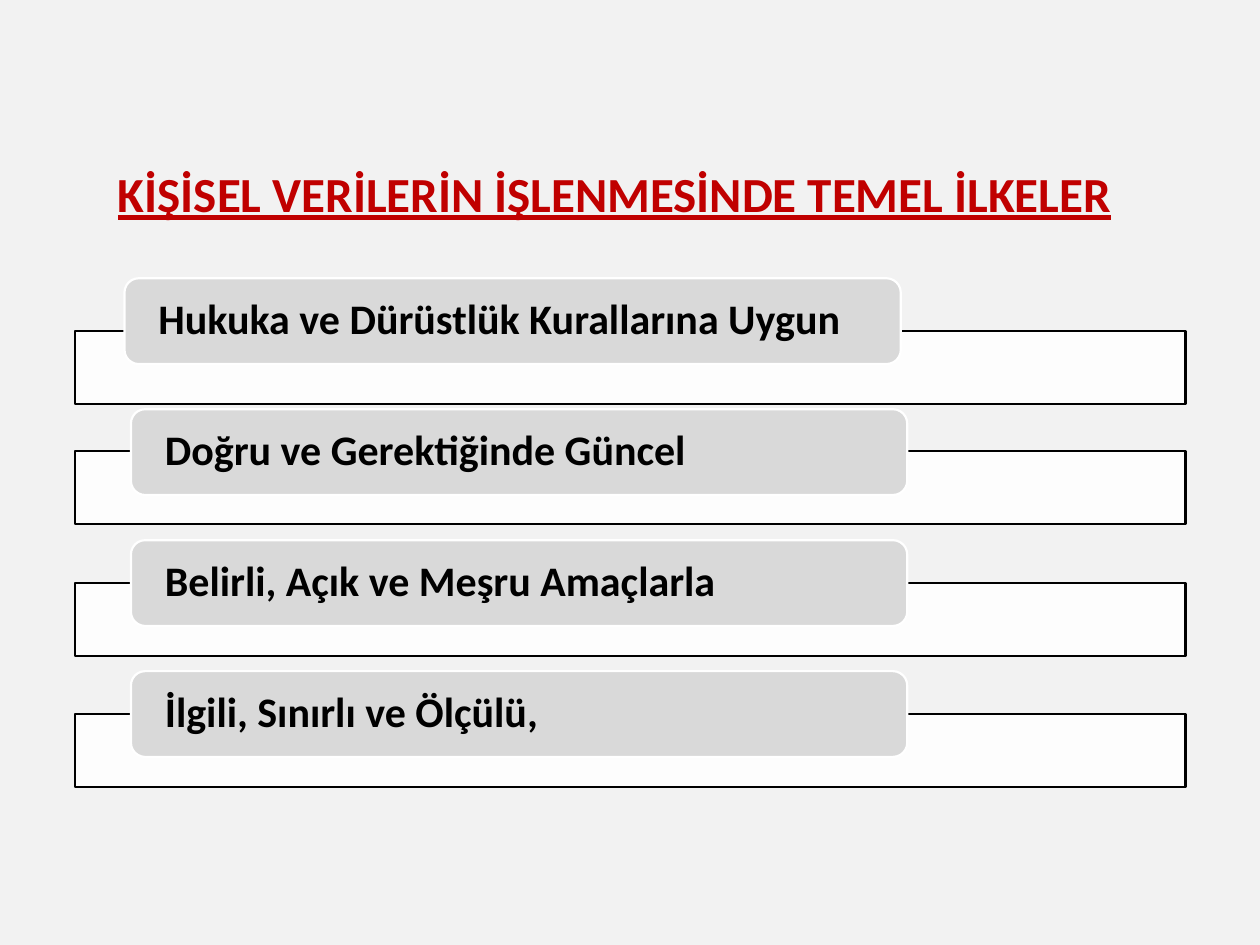
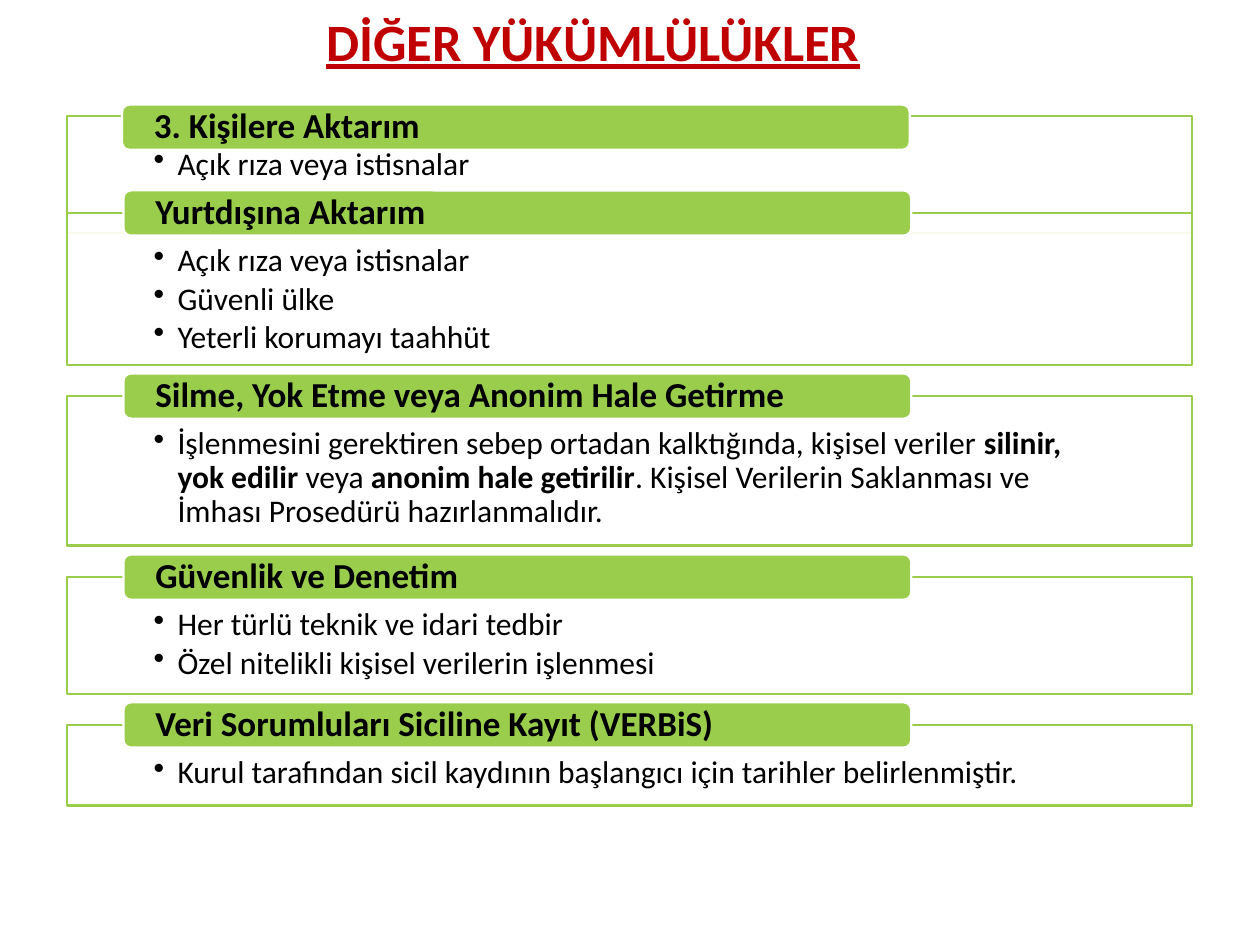
"""Build two slides on the principles and duties of personal data processing."""
from lxml.etree import SubElement
from pptx import Presentation
from pptx.dml.color import RGBColor
from pptx.enum.shapes import MSO_SHAPE
from pptx.enum.text import MSO_ANCHOR, PP_ALIGN
from pptx.oxml.ns import qn
from pptx.util import Cm, Pt

RED, BLACK, WHITE = "C00000", "000000", "FFFFFF"
LIGHT_GREY, GREY, GREEN = "F2F2F2", "D9D9D9", "9ACD4C"
FONT = "Calibri"


def color(hex_text):
    """Turn a hex string into a colour."""
    return RGBColor.from_string(hex_text)


def add_box(slide, preset, bounds, fill, line, margins):
    """Add a filled, outlined shape ready for left-aligned text."""
    shape = slide.shapes.add_shape(preset, *[Cm(length) for length in bounds])
    shape.shadow.inherit = False
    shape.fill.solid()
    shape.fill.fore_color.rgb = color(fill)
    shape.line.color.rgb = color(line)
    shape.line.width = Pt(1.25)
    frame = shape.text_frame
    frame.word_wrap = True
    frame.margin_left = frame.margin_right = Cm(margins[0])
    frame.margin_top, frame.margin_bottom = Cm(margins[1]), Cm(margins[2])
    return shape


presentation = Presentation()
presentation.slide_width, presentation.slide_height = Cm(25.4), Cm(19.05)

principles = [
    ("Hukuka ve Dürüstlük Kurallarına Uygun", 2.51, 6.68),
    ("Doğru ve Gerektiğinde Güncel", 2.64, 9.09),
    ("Belirli, Açık ve Meşru Amaçlarla", 2.64, 11.76),
    ("İlgili, Sınırlı ve Ölçülü,", 2.64, 14.4),
]
principle_blocks = [
    ((1.52, panel_top, 22.38, 1.47), (label_left, 5.61 + 2.64 * row, 15.65, 1.73), heading, [])
    for row, (heading, label_left, panel_top) in enumerate(principles)
]

duties = [
    ("3. Kişilere Aktarım", 2.46, 2.11, 2.34, 2.36, ["Açık rıza veya istisnalar"]),
    ("Yurtdışına Aktarım", 2.49, 3.84, 4.29, 3.07,
     ["Açık rıza veya istisnalar", "Güvenli ülke", "Yeterli korumayı taahhüt"]),
    ("Silme, Yok Etme veya Anonim Hale Getirme", 2.49, 7.53, 7.98, 3.02,
     ["İşlenmesini gerektiren sebep ortadan kalktığında, kişisel veriler "
      "*silinir, yok edilir *veya *anonim hale getirilir*. "
      "Kişisel Verilerin Saklanması ve İmhası Prosedürü hazırlanmalıdır."]),
    ("Güvenlik ve Denetim", 2.49, 11.18, 11.63, 2.36,
     ["Her türlü teknik ve idari tedbir", "Özel nitelikli kişisel verilerin işlenmesi"]),
    ("Veri Sorumluları Siciline Kayıt (VERBiS)", 2.49, 14.16, 14.61, 1.63,
     ["Kurul tarafından sicil kaydının başlangıcı için tarihler belirlenmiştir."]),
]
duty_blocks = [
    ((1.35, panel_top, 22.68, panel_height), (label_left, label_top, 15.88, 0.91), heading, bullets)
    for heading, label_left, label_top, panel_top, panel_height, bullets in duties
]

slides = [
    ("KİŞİSEL VERİLERİN İŞLENMESİNDE TEMEL İLKELER", 28, (0, 3.18, 24.77, 3.07),
     LIGHT_GREY, GREY, BLACK, 24, principle_blocks),
    ("DİĞER YÜKÜMLÜLÜKLER", 30, (-0.43, 0.05, 24.77, 1.55),
     WHITE, GREEN, GREEN, 20, duty_blocks),
]

for title, title_size, title_bounds, background, label_fill, panel_line, label_size, blocks in slides:
    slide = presentation.slides.add_slide(presentation.slide_layouts[6])
    slide.background.fill.solid()
    slide.background.fill.fore_color.rgb = color(background)

    title_box = slide.shapes.add_textbox(*[Cm(length) for length in title_bounds])
    title_box.text_frame.word_wrap = True
    title_box.text_frame.text = title
    paragraph = title_box.text_frame.paragraphs[0]
    paragraph.alignment = PP_ALIGN.CENTER
    font = paragraph.runs[0].font
    font.name, font.size, font.bold, font.underline = FONT, Pt(title_size), True, True
    font.color.rgb = color(RED)

    for panel_bounds, label_bounds, heading, bullets in blocks:
        panel = add_box(slide, MSO_SHAPE.RECTANGLE, panel_bounds, WHITE, panel_line,
                        (1.75, 0.64, 0.36))
        panel_color = panel.fill._xPr.find(qn("a:solidFill"))[0]
        SubElement(panel_color, qn("a:alpha"), val="90000")
        panel.text_frame.vertical_anchor = MSO_ANCHOR.TOP
        for number, bullet in enumerate(bullets):
            frame = panel.text_frame
            paragraph = frame.add_paragraph() if number else frame.paragraphs[0]
            properties = paragraph._p.get_or_add_pPr()
            properties.set("marL", str(Cm(0.48)))
            properties.set("indent", str(-Cm(0.48)))
            SubElement(properties, qn("a:buChar"), char="•")
            paragraph.alignment = PP_ALIGN.LEFT
            paragraph.line_spacing = 0.9
            paragraph.space_after = Pt(2.5)
            for part, text in enumerate(bullet.split("*")):
                run = paragraph.add_run()
                run.text = text
                run.font.name, run.font.size, run.font.bold = FONT, Pt(18), part % 2 == 1
                run.font.color.rgb = color(BLACK)

        label = add_box(slide, MSO_SHAPE.ROUNDED_RECTANGLE, label_bounds, label_fill, WHITE,
                        (0.6, 0, 0))
        label.text_frame.vertical_anchor = MSO_ANCHOR.MIDDLE
        label.text_frame.text = heading
        paragraph = label.text_frame.paragraphs[0]
        paragraph.alignment = PP_ALIGN.LEFT
        paragraph.line_spacing = 0.9
        font = paragraph.runs[0].font
        font.name, font.size, font.bold = FONT, Pt(label_size), True
        font.color.rgb = color(BLACK)

presentation.save("out.pptx")
